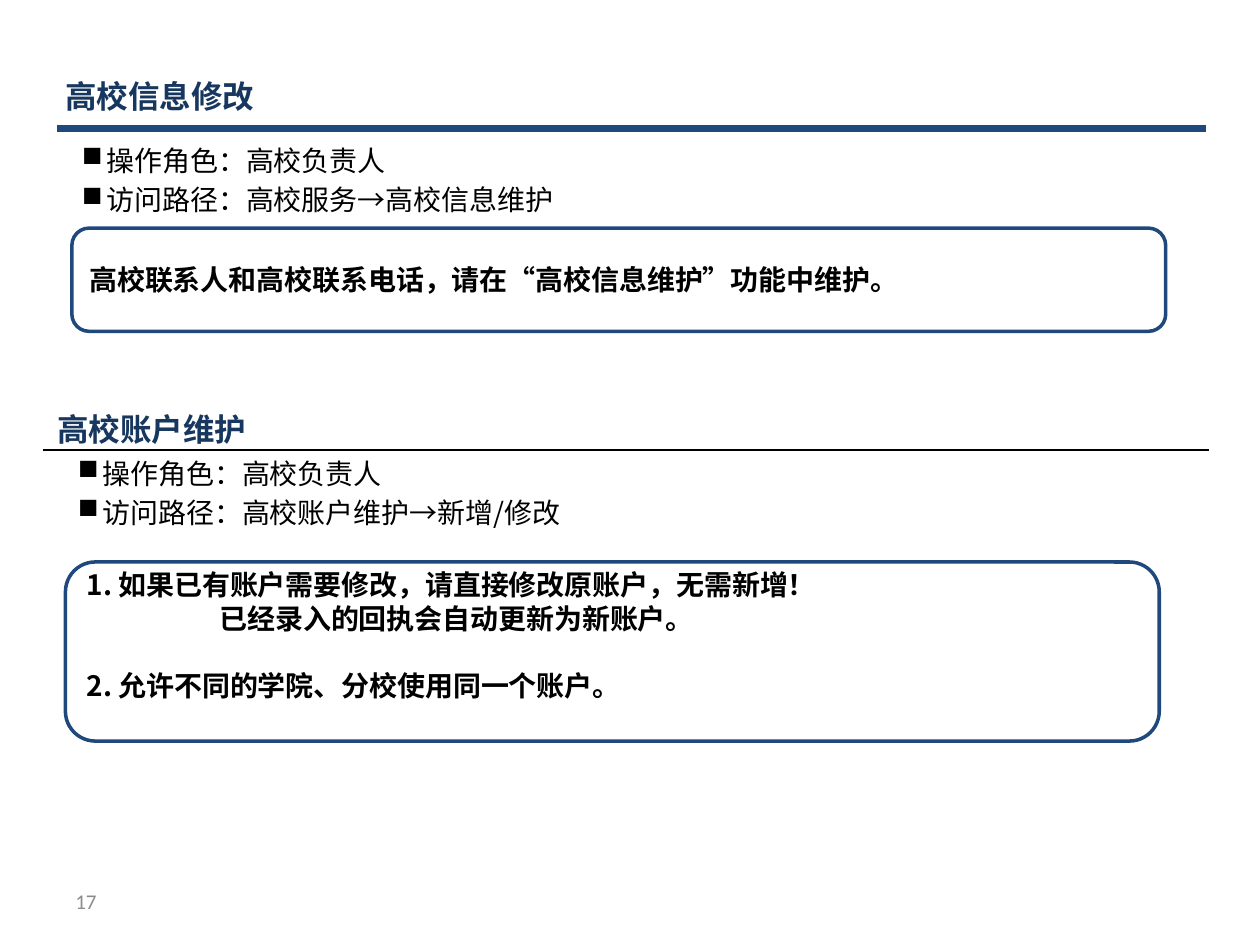
from dataclasses import dataclass

import pptx
import pptx.dml.color
import pptx.enum.shapes
import pptx.enum.text
import pptx.oxml
import pptx.oxml.ns
import pptx.util
from pptx.util import Cm, Pt

ANCHOR = pptx.enum.text.MSO_ANCHOR
SHAPES = pptx.enum.shapes.MSO_SHAPE


@dataclass(frozen=True)
class Theme:
    blue: str = "1F497D"
    navy: str = "17375E"
    black: str = "000000"
    white: str = "FFFFFF"
    gray: str = "8C8C8C"
    title_size: int = 18
    body_size: int = 16
    number_size: int = 12
    latin: str = "Calibri"
    chinese: str = "Noto Sans CJK SC"


THEME = Theme()
TITLE = {"name": THEME.latin, "size": Pt(THEME.title_size), "bold": True}
BODY = {"name": THEME.chinese, "size": Pt(THEME.body_size), "bold": False}
NOTE = {**BODY, "bold": True}
NUMBER = {"name": THEME.latin, "size": Pt(THEME.number_size), "bold": False}


def color(value):
    return pptx.dml.color.RGBColor.from_string(value)


def add_element(parent, tag, **attributes):
    element = pptx.oxml.ns.qn(tag)
    child = parent.makeelement(element, attributes)
    parent.append(child)
    return child


def write_run(paragraph, text, style, font_color):
    run = paragraph.add_run()
    run.text = text
    for name, value in style.items():
        setattr(run.font, name, value)
    run.font.color.rgb = color(font_color)
    add_element(run.font._element, "a:ea", typeface=THEME.chinese)


def indent(paragraph, margin, first_line=0):
    properties = paragraph._p.get_or_add_pPr()
    properties.set("marL", str(int(margin)))
    properties.set("indent", str(int(first_line)))
    return properties


def add_text_frame(slide, box, anchor):
    frame = slide.shapes.add_textbox(*map(Cm, box)).text_frame
    frame.word_wrap = True
    frame.vertical_anchor = anchor
    return frame


def add_label(slide, box, text, style, font_color):
    frame = add_text_frame(slide, box, ANCHOR.MIDDLE)
    write_run(frame.paragraphs[0], text, style, font_color)


def add_rule(slide, left, right, top, line_color, width):
    rule = slide.shapes.add_connector(
        pptx.enum.shapes.MSO_CONNECTOR.STRAIGHT, Cm(left), Cm(top), Cm(right), Cm(top))
    rule.line.color.rgb = color(line_color)
    rule.line.width = Pt(width)
    add_element(rule._element.spPr, "a:effectLst")


def add_bullets(slide, box, lines):
    frame = add_text_frame(slide, box, ANCHOR.TOP)
    for index, line in enumerate(lines):
        paragraph = frame.add_paragraph() if index else frame.paragraphs[0]
        if index:
            paragraph.space_before = Pt(3.2)
        properties = indent(paragraph, Cm(0.5), -Cm(0.5))
        add_element(properties, "a:buChar", char="■")
        write_run(paragraph, line, BODY, THEME.black)


def add_note(slide, box, lines, bottom_inset=0):
    """Draw a rounded note; each line is (text, left indent in cm, space before in pt)."""
    shape = slide.shapes.add_shape(SHAPES.FLOWCHART_ALTERNATE_PROCESS, *map(Cm, box))
    shape.shadow.inherit = False
    shape.fill.solid()
    shape.fill.fore_color.rgb = color(THEME.white)
    shape.line.color.rgb = color(THEME.blue)
    shape.line.width = Pt(2)
    frame = shape.text_frame
    layout = {"word_wrap": True, "vertical_anchor": ANCHOR.MIDDLE,
              "margin_top": 0, "margin_bottom": Cm(bottom_inset)}
    for name, value in layout.items():
        setattr(frame, name, value)
    for index, (text, margin, space_before) in enumerate(lines):
        paragraph = frame.add_paragraph() if index else frame.paragraphs[0]
        paragraph.alignment = pptx.enum.text.PP_ALIGN.LEFT
        if space_before:
            paragraph.space_before = Pt(space_before)
        if margin:
            indent(paragraph, Cm(margin))
        write_run(paragraph, text, NOTE, THEME.black)


def add_school_information(slide, left, top):
    add_rule(slide, left + 0.07, left + 23.24, top + 1.17, THEME.blue, 4)
    add_label(slide, (left, top, 22.86, 1.04), "高校信息修改", TITLE, THEME.navy)
    add_note(slide, (left + 0.38, top + 3.18, 22.05, 2.08),
             [("高校联系人和高校联系电话，请在“高校信息维护”功能中维护。", 0, 0)])
    add_bullets(slide, (left + 0.33, top + 1.35, 22.81, 1.78),
                ["操作角色：高校负责人", "访问路径：高校服务→高校信息维护"])


def add_school_account(slide, left, top):
    add_note(slide, (left + 0.41, top + 3.2, 22.05, 3.61),
             [("1. 如果已有账户需要修改，请直接修改原账户，无需新增！", 0, 0),
              ("已经录入的回执会自动更新为新账户。", 2.68, 0),
              ("2. 允许不同的学院、分校使用同一个账户。", 0, 19)],
             bottom_inset=0.68)
    add_bullets(slide, (left + 0.41, top + 0.94, 22.81, 1.78),
                ["操作角色：高校负责人", "访问路径：高校账户维护→新增/修改"])
    add_label(slide, (left, top, 22.86, 1.04), "高校账户维护", TITLE, THEME.navy)
    add_rule(slide, left - 0.05, left + 23.47, top + 0.94, THEME.black, 0.75)


def main():
    presentation = pptx.Presentation()
    presentation.slide_width = Cm(25.4)
    presentation.slide_height = Cm(19.05)
    slide = presentation.slides.add_slide(presentation.slide_layouts[6])
    add_school_information(slide, 1.07, 1.42)
    add_school_account(slide, 0.91, 8.13)
    add_label(slide, (1.27, 17.65, 5.92, 1.02), "17", NUMBER, THEME.gray)
    presentation.save("out.pptx")


if __name__ == "__main__":
    main()
